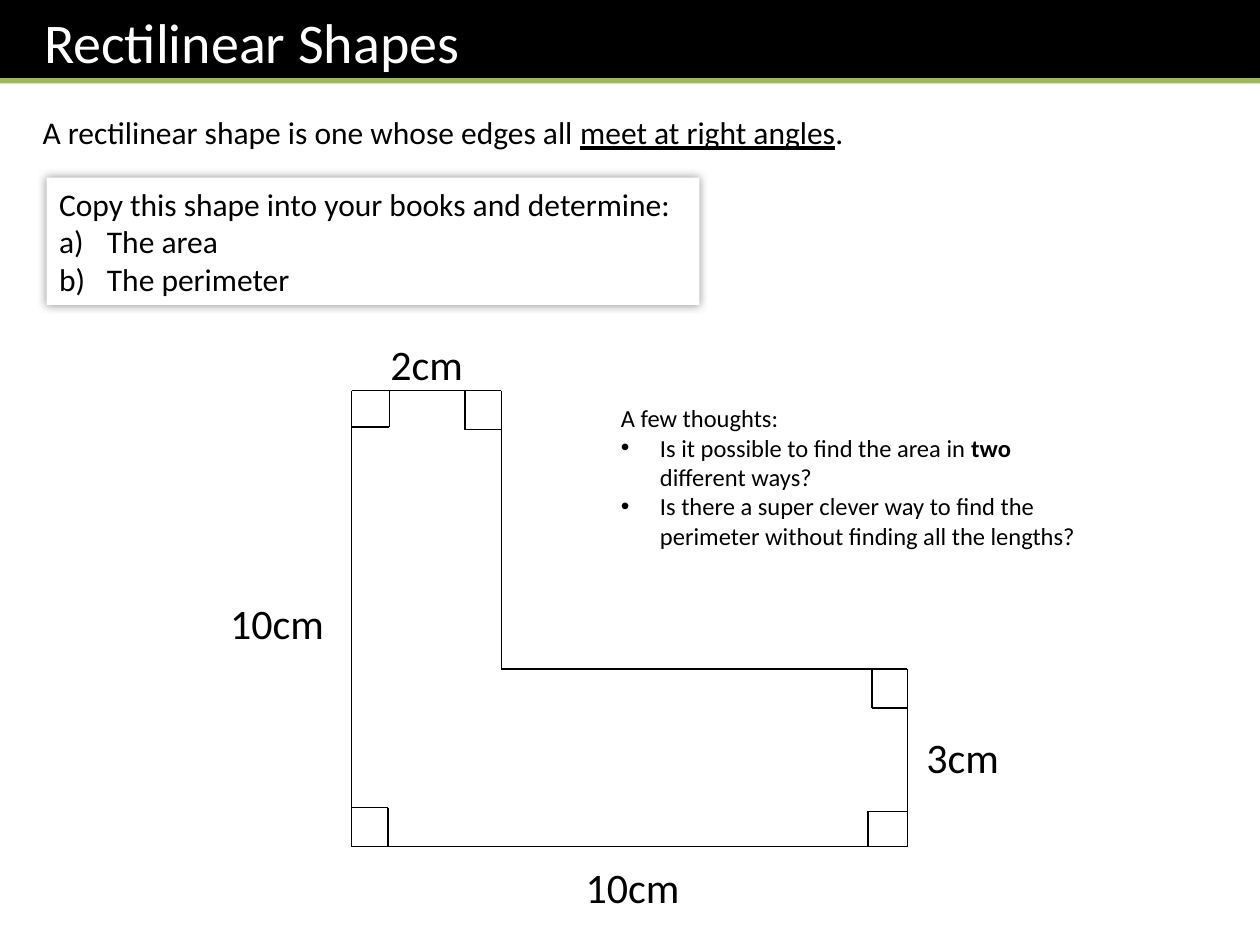
from itertools import pairwise

from lxml.etree import SubElement
from pptx import Presentation
from pptx.dml.color import RGBColor
from pptx.enum.shapes import MSO_CONNECTOR as Link, MSO_SHAPE as Preset
from pptx.enum.text import MSO_ANCHOR as Anchor, MSO_AUTO_SIZE as Fit, PP_ALIGN as Align
from pptx.oxml.ns import qn
from pptx.util import Inches, Pt

COLUMNS, ROWS = 100, 75
WIDTH, HEIGHT = Inches(10), Inches(7.5)
BLACK, WHITE, GREEN = "000000", "FFFFFF", "9BBB59"
LETTERS = ("buAutoNum", {"type": "alphaLcParenR"})
DOTS = ("buChar", {"char": "•"})


def colour(value):
    """Turn a hex string into a colour."""
    return RGBColor.from_string(value)


def place(*cells):
    """Turn alternating columns and rows of the grid into slide lengths."""
    units = (WIDTH / COLUMNS, HEIGHT / ROWS)
    return [round(cell * units[i % 2]) for i, cell in enumerate(cells)]


def add_marker(paragraph, marker, indent):
    """Give a paragraph a hanging list marker."""
    tag, attributes = marker
    properties = paragraph._p.get_or_add_pPr()
    properties.set("marL", str(Inches(indent)))
    properties.set("indent", str(-Inches(indent)))
    SubElement(properties, qn("a:buFont"), typeface="Arial" if marker is DOTS else "+mj-lt")
    SubElement(properties, qn(f"a:{tag}"), attributes)


def write(shape, text, items=(), *, size, ink=BLACK, align=Align.LEFT,
          marker=None, indent=0.0, anchor=Anchor.TOP, inset=0.1):
    """Fill a shape with text and list items, where * starts bold and _ underlined runs."""
    frame = shape.text_frame
    frame.word_wrap = True
    frame.auto_size = Fit.SHAPE_TO_FIT_TEXT
    frame.vertical_anchor = anchor
    frame.margin_left = Inches(inset)
    for number, line in enumerate([text, *items]):
        paragraph = frame.add_paragraph() if number else frame.paragraphs[0]
        paragraph.alignment = align
        if number:
            add_marker(paragraph, marker, indent)
        for part in [line] if isinstance(line, str) else line:
            run = paragraph.add_run()
            run.text = part.lstrip("*_")
            font = run.font
            font.name, font.size, font.color.rgb = "Calibri", Pt(size), colour(ink)
            if part.startswith("*"):
                font.bold = True
            if part.startswith("_"):
                font.underline = True


def add_text(slide, cells, text, items=(), **style):
    """Add a text box."""
    write(slide.shapes.add_textbox(*place(*cells)), text, items, **style)


def add_panel(slide, cells, fill):
    """Add a filled rectangle without an outline or shadow."""
    panel = slide.shapes.add_shape(Preset.RECTANGLE, *place(*cells))
    panel.shadow.inherit = False
    panel.fill.solid()
    panel.fill.fore_color.rgb = colour(fill)
    panel.line.fill.background()
    return panel


def add_glow(panel, blur, opacity):
    """Put a soft black shadow all around a panel."""
    effects = panel._element.spPr.find(qn("a:effectLst"))
    shadow = SubElement(effects, qn("a:outerShdw"), blurRad=str(Pt(blur)),
                        dist="0", algn="ctr", rotWithShape="0")
    tint = SubElement(shadow, qn("a:srgbClr"), val=BLACK)
    SubElement(tint, qn("a:alpha"), val=str(opacity * 1000))


def add_line(slide, start, end, ink=BLACK, weight=0.75):
    """Add a straight line between two grid points."""
    line = slide.shapes.add_connector(Link.STRAIGHT, *place(*start, *end))
    line.line.color.rgb = colour(ink)
    line.line.width = Pt(weight)
    SubElement(line._element.spPr, qn("a:effectLst"))


def add_right_angle(slide, corner, across, down):
    """Mark a corner with the two inner sides of a small square."""
    x, y = corner
    inner = (x + across, y + down)
    add_line(slide, inner, (x + across, y))
    add_line(slide, inner, (x, y + down))


def add_header(slide):
    """Add the title band and its green rule."""
    band = add_panel(slide, (0, 0, COLUMNS, 6.6), BLACK)
    write(band, "Rectilinear Shapes", size=32, ink=WHITE, anchor=Anchor.MIDDLE, inset=0.35)
    add_line(slide, (0, 6.4), (COLUMNS, 6.4), GREEN, 3)


def add_figure(slide):
    """Draw the L shape with its right angles and lengths."""
    left, notch, right = 27.9, 39.8, 72
    top, step, bottom = 31, 53.1, 67.2
    outline = [(left, top), (left, bottom), (right, bottom), (right, step),
               (notch, step), (notch, top), (left, top)]
    for start, end in pairwise(outline):
        add_line(slide, start, end)

    for corner, across, down in [
        ((left, bottom), 2.9, -3.1),
        ((right, step), -2.8, 3.1),
        ((right, bottom), -3.1, -2.8),
        ((notch, top), -2.9, 3.1),
        ((left, top), 3, 2.9),
    ]:
        add_right_angle(slide, corner, across, down)

    add_text(slide, (30, 26.4, 9.1, 5), "2cm", size=24)
    for length, x, y in [("10cm", 16.1, 46.9), ("10cm", 44.3, 67.9), ("3cm", 70.5, 57.6)]:
        add_text(slide, (x, y, 11.8, 5), length, size=24, align=Align.CENTER)


def add_task(slide):
    """Add the shadowed box with the task."""
    task = add_panel(slide, (3.7, 14.1, 51.8, 10.1), WHITE)
    add_glow(task, blur=5, opacity=40)
    write(task, "Copy this shape into your books and determine:",
          ["The area", "The perimeter"],
          size=18, marker=LETTERS, indent=0.38, anchor=Anchor.MIDDLE)


def main():
    """Build and save the slide."""
    deck = Presentation()
    deck.slide_width, deck.slide_height = WIDTH, HEIGHT
    slide = deck.slides.add_slide(deck.slide_layouts[6])

    add_header(slide)
    add_text(slide, (2.4, 8.5, 69.3, 4),
             ["A rectilinear shape is one whose edges all ", "_meet at right angles", "."], size=18)
    add_figure(slide)
    add_task(slide)
    add_text(slide, (48.3, 31.5, 38.3, 12.8), "A few thoughts:",
             [["Is it possible to find the area in ", "*two", " different ways?"],
              "Is there a super clever way to find the perimeter without finding all the lengths?"],
             size=14, marker=DOTS, indent=0.31)
    deck.save("out.pptx")


if __name__ == "__main__":
    main()
